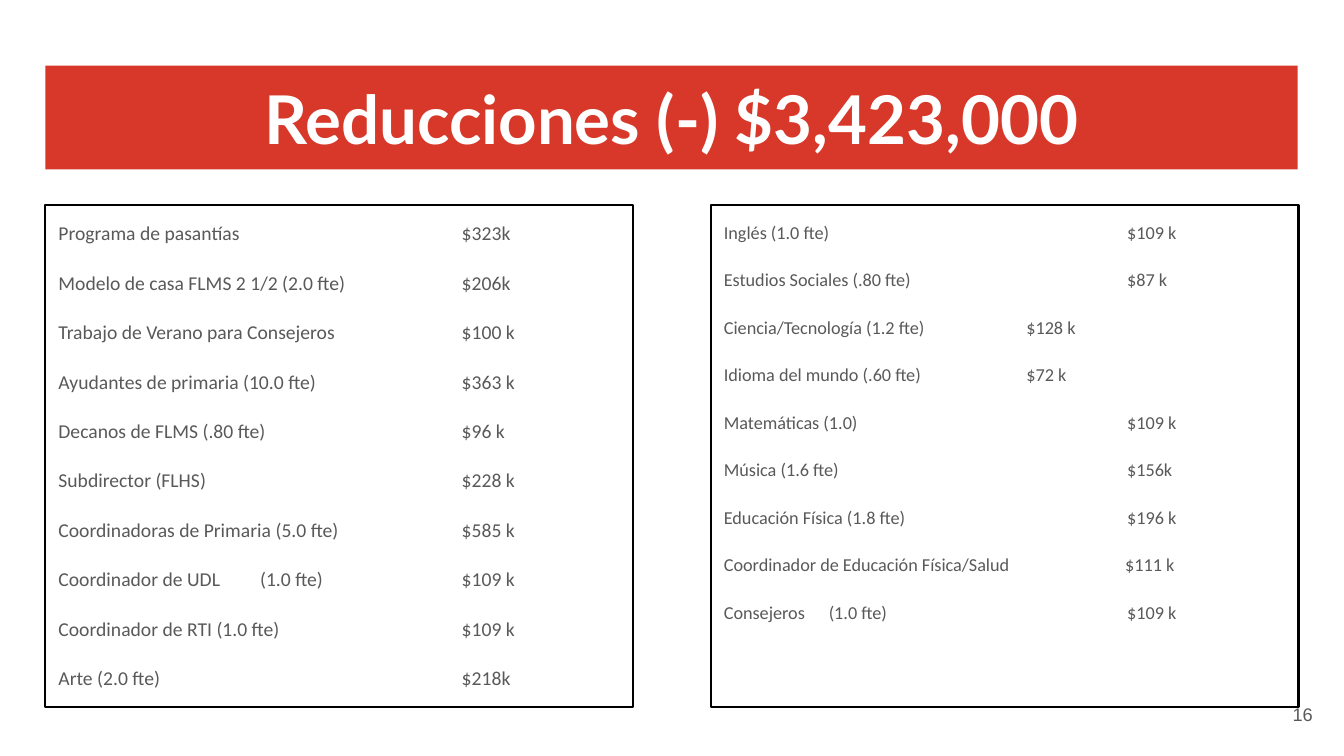
from lxml.etree import SubElement
from pptx import Presentation
from pptx.dml.color import RGBColor as RGB
from pptx.enum.text import MSO_ANCHOR as Anchor, MSO_AUTO_SIZE as Fit, PP_ALIGN as Align
from pptx.oxml.ns import qn
from pptx.util import Inches, Pt


def color(code):
    return RGB.from_string(code)


def style(box, font, size, code, bold=False, align=Align.LEFT, anchor=Anchor.TOP):
    """Format the frame of a box and all the text in it."""
    frame = box.text_frame
    frame.word_wrap = True
    frame.auto_size = Fit.NONE
    frame.vertical_anchor = anchor
    frame.margin_left = frame.margin_right = Inches(0.13)
    frame.margin_top = frame.margin_bottom = Inches(0.13)
    for para in frame.paragraphs:
        para.alignment = align
        for run in para.runs:
            run.font.name = font
            run.font.size = Pt(size)
            run.font.bold = bold
            run.font.color.rgb = color(code)


# Each row: item, amount, tab stops in inches
lists = [
    (0.45, 14, [
        ("Programa de pasantías", "$323k", [4]),
        ("Modelo de casa FLMS 2 1/2 (2.0 fte)", "$206k", [4]),
        ("Trabajo de Verano para Consejeros", "$100 k", [4]),
        ("Ayudantes de primaria (10.0 fte)", "$363 k", [4]),
        ("Decanos de FLMS (.80 fte)", "$96 k", [4]),
        ("Subdirector (FLHS)", "$228 k", [4]),
        ("Coordinadoras de Primaria (5.0 fte)", "$585 k", [4]),
        ("Coordinador de UDL\t(1.0 fte)", "$109 k", [2, 4]),
        ("Coordinador de RTI (1.0 fte)", "$109 k", [4]),
        ("Arte (2.0 fte)", "$218k", [4]),
    ]),
    (7.05, 13, [
        ("Inglés (1.0 fte)", "$109 k", [4]),
        ("Estudios Sociales (.80 fte)", "$87 k", [4]),
        ("Ciencia/Tecnología (1.2 fte)", "$128 k", [3]),
        ("Idioma del mundo (.60 fte)", "$72 k", [3]),
        ("Matemáticas (1.0)", "$109 k", [4]),
        ("Música (1.6 fte)", "$156k", [4]),
        ("Educación Física (1.8 fte)", "$196 k", [4]),
        ("Coordinador de Educación Física/Salud", "$111 k", [3.98]),
        ("Consejeros\t(1.0 fte)", "$109 k", [1.04, 4]),
    ]),
]

deck = Presentation()
deck.slide_width, deck.slide_height = Inches(13.33), Inches(7.5)
slide = deck.slides.add_slide(deck.slide_layouts[5])

title = slide.shapes.title
title.left, title.top = Inches(0.45), Inches(0.65)
title.width, title.height = Inches(12.42), Inches(1.03)
title.fill.solid()
title.fill.fore_color.rgb = color("D83829")
title.text_frame.text = "Reducciones (-) $3,423,000"
style(title, "Lato", 48, "FFFFFF", True, Align.CENTER, Anchor.MIDDLE)

for left, size, rows in lists:
    box = slide.shapes.add_textbox(Inches(left), Inches(2.03), Inches(5.83), Inches(4.98))
    box.line.color.rgb = color("000000")
    box.line.width = Pt(1.5)
    box.text_frame.text = "\n".join(f"{item}\t{cost}" for item, cost, stops in rows)
    style(box, "Calibri", size, "595959")
    for i, (para, row) in enumerate(zip(box.text_frame.paragraphs, rows)):
        para.line_spacing = 1.15
        para.space_before = Pt(16 if i else 0)
        tabs = SubElement(para._p.get_or_add_pPr(), qn("a:tabLst"))
        for stop in row[2]:
            SubElement(tabs, qn("a:tab"), pos=str(Inches(stop)), algn="l")

page = slide.shapes.add_textbox(Inches(12.35), Inches(6.8), Inches(0.8), Inches(0.57))
page.text_frame.text = "16"
style(page, "Arial", 13, "595959", align=Align.RIGHT, anchor=Anchor.MIDDLE)

deck.save("out.pptx")
